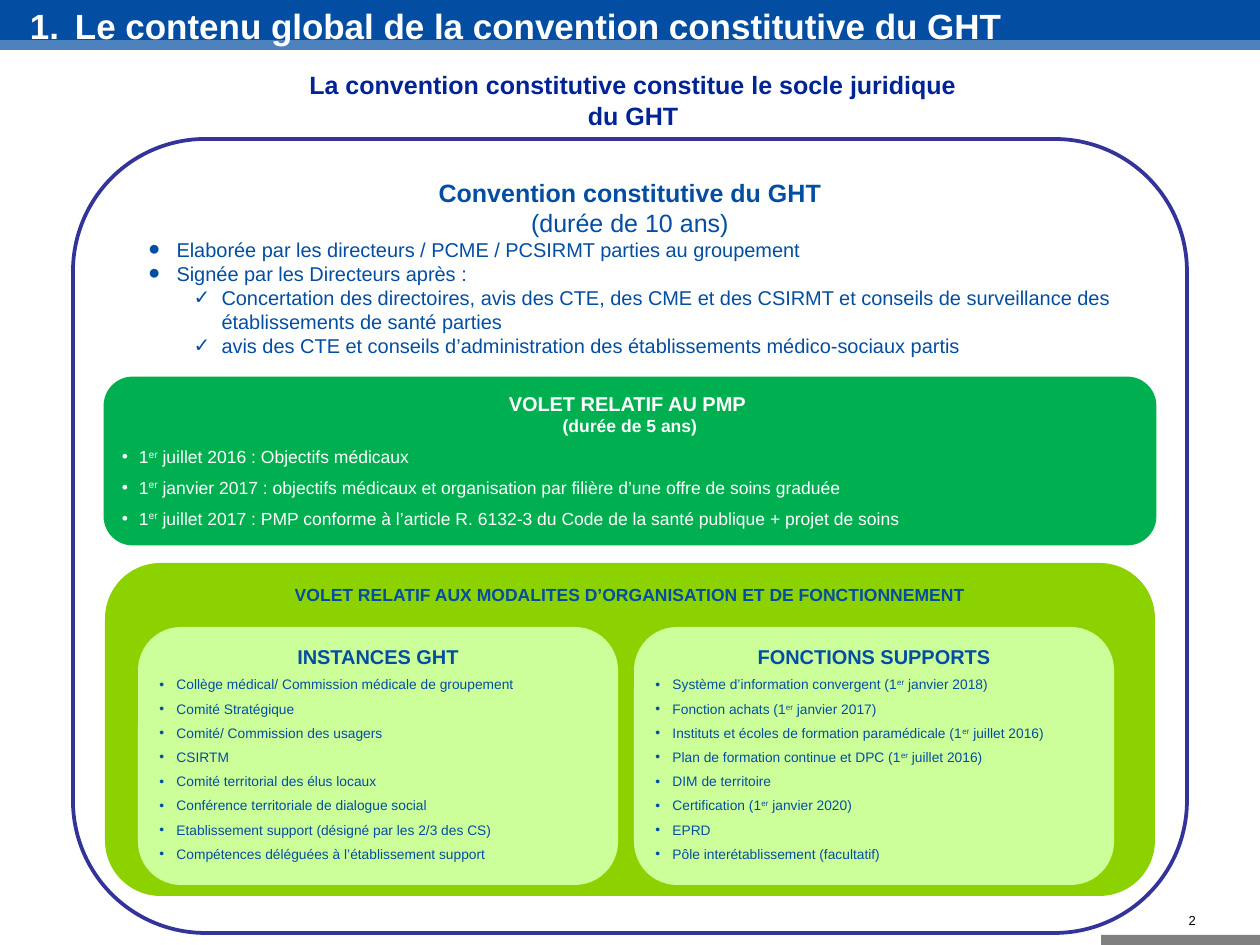
from dataclasses import dataclass

from lxml import etree
from pptx import Presentation
from pptx.dml.color import RGBColor
from pptx.enum.shapes import MSO_SHAPE
from pptx.enum.text import MSO_ANCHOR, PP_ALIGN
from pptx.oxml.ns import qn
from pptx.util import Pt

RECT, ROUNDED = MSO_SHAPE.RECTANGLE, MSO_SHAPE.ROUNDED_RECTANGLE
LEFT, CENTER, RIGHT, JUSTIFY = PP_ALIGN.LEFT, PP_ALIGN.CENTER, PP_ALIGN.RIGHT, PP_ALIGN.JUSTIFY
TOP, MIDDLE = MSO_ANCHOR.TOP, MSO_ANCHOR.MIDDLE

PX = 10160  # EMU, 90 px to the inch
FONT = "Arial"
COLORS = {
    "blue": "034EA2", "navy": "002395", "frame": "333399", "gray": "808080",
    "green": "00B050", "lime": "8CD200", "pale": "CCFF99",
    "white": "FFFFFF", "black": "000000",
}


@dataclass(frozen=True)
class Box:
    left: int
    top: int
    width: int
    height: int


@dataclass(frozen=True)
class Para:
    """One paragraph; the text between ^ marks is superscript."""
    text: str
    size: float
    bold: bool = False
    align: PP_ALIGN = LEFT
    bullet: str = ""
    bullet_percent: int = 100
    margin: int = 0
    hanging: int = 0
    level: int = 0
    gap: float = 0


@dataclass(frozen=True)
class Panel:
    box: Box
    paras: list[Para]
    color: str
    fill: str = ""
    line: str = ""
    line_width: float = 0


def rgb(name: str) -> RGBColor:
    return RGBColor.from_string(COLORS[name])


def add_bullet(paragraph, para: Para) -> None:
    props = paragraph._p.get_or_add_pPr()
    props.set("marL", str(para.margin * PX))
    props.set("indent", str(-para.hanging * PX))
    marks = [("a:buSzPct", {"val": str(para.bullet_percent * 1000)}),
             ("a:buFont", {"typeface": FONT})]
    if para.bullet == "1.":
        marks.append(("a:buAutoNum", {"type": "arabicPeriod"}))
    else:
        marks.append(("a:buChar", {"char": para.bullet}))
    for tag, values in marks:
        etree.SubElement(props, qn(tag), values)


def write(frame, paras: list[Para], color: str, anchor=TOP,
          side_margin: int = 9, end_margin: int = 5) -> None:
    layout = {"word_wrap": True, "vertical_anchor": anchor,
              "margin_left": side_margin * PX, "margin_right": side_margin * PX,
              "margin_top": end_margin * PX, "margin_bottom": end_margin * PX}
    for name, value in layout.items():
        setattr(frame, name, value)
    for index, para in enumerate(paras):
        paragraph = frame.add_paragraph() if index else frame.paragraphs[0]
        settings = {"alignment": para.align, "level": para.level,
                    "space_before": Pt(para.gap)}
        for name, value in settings.items():
            setattr(paragraph, name, value)
        if para.bullet:
            add_bullet(paragraph, para)
        for part, words in enumerate(para.text.split("^")):
            run = paragraph.add_run()
            run.text = words
            style = {"name": FONT, "size": Pt(para.size), "bold": para.bold}
            for name, value in style.items():
                setattr(run.font, name, value)
            run.font.color.rgb = rgb(color)
            if part % 2:
                run._r.get_or_add_rPr().set("baseline", "30000")


def add_block(slide, kind, box: Box, fill: str = "", line: str = "", line_width: float = 0):
    block = slide.shapes.add_shape(kind, box.left * PX, box.top * PX,
                                   box.width * PX, box.height * PX)
    block.shadow.inherit = False
    if fill:
        block.fill.solid()
        block.fill.fore_color.rgb = rgb(fill)
    else:
        block.fill.background()
    if line:
        block.line.color.rgb = rgb(line)
        block.line.width = Pt(line_width)
    else:
        block.line.fill.background()
    return block


def add_panel(slide, panel: Panel, end_margin: int = 5) -> None:
    block = add_block(slide, ROUNDED, panel.box, panel.fill, panel.line, panel.line_width)
    write(block.text_frame, panel.paras, panel.color, end_margin=end_margin)


def add_label(slide, box: Box, paras: list[Para], color: str, **layout) -> None:
    label = slide.shapes.add_textbox(box.left * PX, box.top * PX,
                                     box.width * PX, box.height * PX)
    write(label.text_frame, paras, color, **layout)


def heading(text: str, size: float, bold: bool = True) -> Para:
    return Para(text, size, bold, CENTER)


def dotted(texts: list[str], size: float, align=LEFT) -> list[Para]:
    return [Para(text, size, align=align, bullet="•", margin=17, hanging=17, gap=size * 0.56)
            for text in texts]


def main_point(text: str) -> Para:
    return Para(text, 16, bullet="•", bullet_percent=162, margin=56, hanging=28)


def approval(text: str) -> Para:
    return Para(text, 16, bullet="✓", margin=101, hanging=28, level=1)


CONVENTION = Panel(Box(73, 139, 1114, 794), [
    heading("Convention constitutive du GHT", 20),
    heading("(durée de 10 ans)", 20, bold=False),
    main_point("Elaborée par les directeurs / PCME / PCSIRMT parties au groupement"),
    main_point("Signée par les Directeurs après :"),
    approval("Concertation des directoires, avis des CTE, des CME et des CSIRMT et conseils "
             "de surveillance des établissements de santé parties"),
    approval("avis des CTE et conseils d’administration des établissements médico-sociaux partis"),
], "blue", line="frame", line_width=3)

PMP = Panel(Box(105, 378, 1050, 166), [
    heading("VOLET RELATIF AU PMP ", 16),
    heading("(durée de 5 ans)", 14),
    *dotted([
        "1^er^ juillet 2016 : Objectifs médicaux",
        "1^er^ janvier 2017 : objectifs médicaux et organisation par filière d’une offre de soins graduée",
        "1^er^ juillet 2017 : PMP conforme à l’article R. 6132-3 du Code de la santé publique + projet de soins",
    ], 14, JUSTIFY),
], "white", "green", "green", 2.25)

ORGANISATION = Panel(Box(105, 563, 1050, 333), [
    heading("VOLET RELATIF AUX MODALITES D’ORGANISATION ET DE FONCTIONNEMENT", 14),
], "blue", "lime")

TOPICS = {
    "INSTANCES GHT": [
        "Collège médical/ Commission médicale de groupement",
        "Comité Stratégique",
        "Comité/ Commission des usagers",
        "CSIRTM",
        "Comité territorial des élus locaux",
        "Conférence territoriale de dialogue social",
        "Etablissement support (désigné par les 2/3 des CS)",
        "Compétences déléguées à l’établissement support",
    ],
    "FONCTIONS SUPPORTS": [
        "Système d’information convergent (1^er^ janvier 2018)",
        "Fonction achats (1^er^ janvier 2017)",
        "Instituts et écoles de formation paramédicale (1^er^ juillet 2016)",
        "Plan de formation continue et DPC (1^er^ juillet 2016)",
        "DIM de territoire",
        "Certification (1^er^ janvier 2020)",
        "EPRD",
        "Pôle interétablissement (facultatif)",
    ],
}


def main() -> None:
    deck = Presentation()
    deck.slide_width, deck.slide_height = 1260 * PX, 945 * PX
    slide = deck.slides.add_slide(deck.slide_layouts[6])

    add_label(slide, Box(1041, 912, 159, 16), [Para("2", 10.5, align=RIGHT)], "black",
              anchor=MIDDLE, side_margin=4, end_margin=0)
    stripe = add_block(slide, RECT, Box(0, 40, 1260, 10), "blue")
    stripe_color = stripe.fill._xPr.find(qn("a:solidFill"))[0]
    etree.SubElement(stripe_color, qn("a:alpha"), {"val": "70000"})
    add_block(slide, RECT, Box(0, 0, 1260, 40), "blue")
    add_block(slide, RECT, Box(1101, 935, 159, 10), "gray")

    title = Para("Le contenu global de la convention constitutive du GHT", 28, True,
                 bullet="1.", margin=45, hanging=45)
    add_label(slide, Box(30, 5, 1206, 41), [title], "white",
              anchor=MIDDLE, side_margin=0, end_margin=0)
    add_label(slide, Box(30, 65, 1206, 69), [
        heading("La convention constitutive constitue le socle juridique", 20),
        heading("du GHT", 20),
    ], "navy")

    add_panel(slide, CONVENTION, end_margin=0)
    add_panel(slide, PMP)
    add_panel(slide, ORGANISATION)
    for column, (topic, items) in enumerate(TOPICS.items()):
        add_panel(slide, Panel(Box(138 + column * 496, 627, 480, 258),
                               [heading(topic, 16), *dotted(items, 11)], "blue", "pale"))
    deck.save("out.pptx")


if __name__ == "__main__":
    main()
